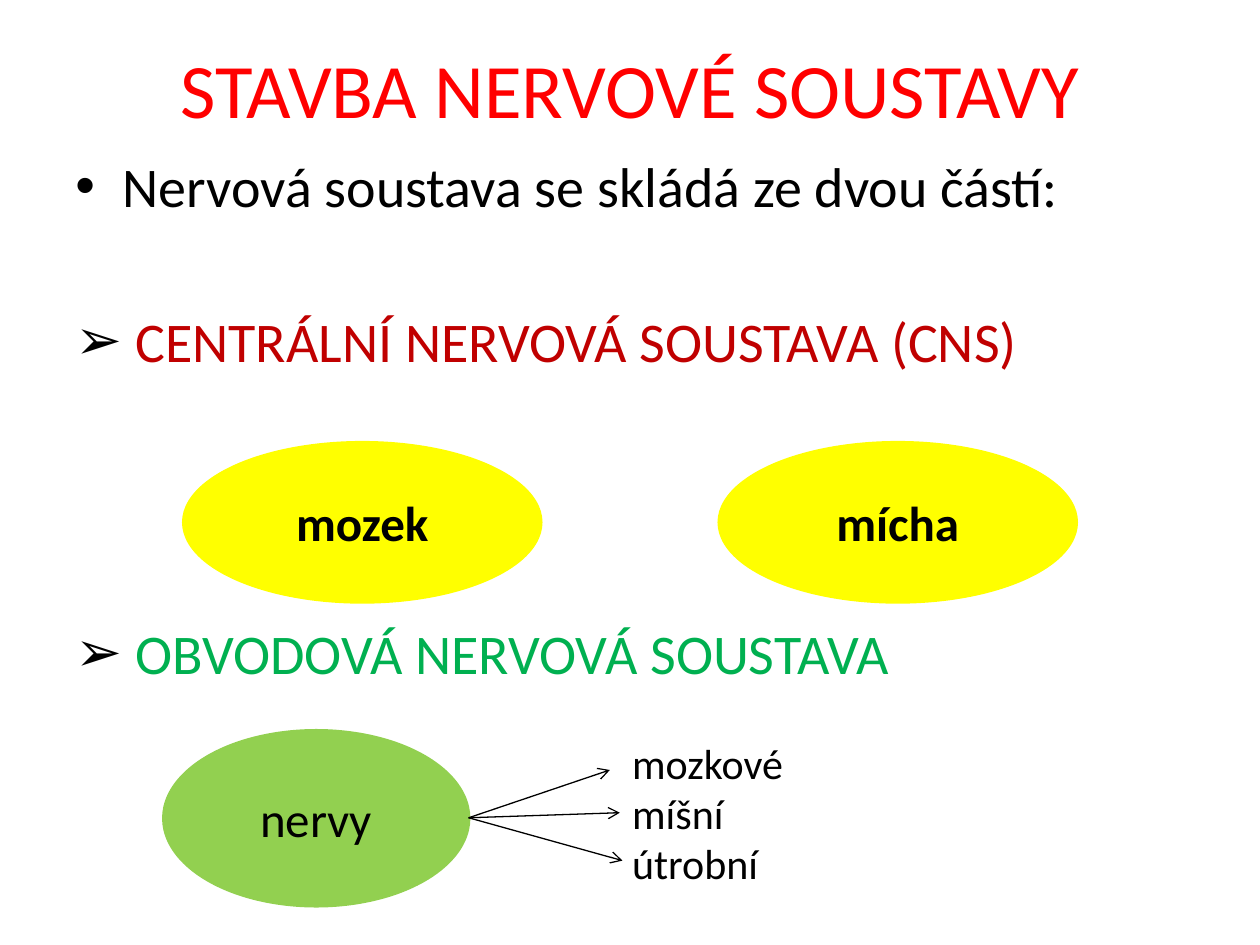
from dataclasses import dataclass

from lxml.etree import SubElement
from pptx import Presentation
from pptx.dml.color import RGBColor
from pptx.enum.shapes import MSO_CONNECTOR, MSO_SHAPE
from pptx.enum.text import MSO_ANCHOR, PP_ALIGN
from pptx.oxml.ns import qn
from pptx.util import Pt


@dataclass(frozen=True)
class Theme:
    font: str = "Calibri"
    black: str = "000000"
    red: str = "FF0000"
    dark: str = "C00000"
    green: str = "00B050"
    lime: str = "92D050"
    yellow: str = "FFFF00"
    title: int = 44
    body: int = 32
    oval: int = 28
    label: int = 24


theme = Theme()


def write(para, text, size, color=theme.black, bold=False):
    run = para.add_run()
    run.text = text
    font = run.font
    font.name, font.size, font.bold = theme.font, Pt(size), bold
    font.color.rgb = RGBColor.from_string(color)


def add_frame(left, top, width, height):
    """Add a wrapping text box and return its text frame."""
    box = slide.shapes.add_textbox(Pt(left), Pt(top), Pt(width), Pt(height))
    box.text_frame.word_wrap = True
    return box.text_frame


deck = Presentation()
deck.slide_width, deck.slide_height = Pt(720), Pt(540)
slide = deck.slides.add_slide(deck.slide_layouts[6])

# Title
frame = add_frame(36, 0, 648, 100)
frame.vertical_anchor = MSO_ANCHOR.MIDDLE
para = frame.paragraphs[0]
para.alignment = PP_ALIGN.CENTER
write(para, "STAVBA NERVOVÉ SOUSTAVY", theme.title, theme.red)

# Bulleted body: text, colour, bullet, indent, space before
points = [
    ("Nervová soustava se skládá ze dvou částí:", theme.black, "•", 27, 0),
    ("CENTRÁLNÍ NERVOVÁ SOUSTAVA (CNS)", theme.dark, "➢", 34.2, 50.6),
    ("OBVODOVÁ NERVOVÁ SOUSTAVA", theme.green, "➢", 34.2, 139.8),
]
frame = add_frame(36, 82.8, 648, 442)
for i, (text, color, mark, indent, gap) in enumerate(points):
    para = frame.add_paragraph() if i else frame.paragraphs[0]
    para.space_before = Pt(gap)
    props = para._p.get_or_add_pPr()
    props.set("marL", str(Pt(indent)))
    props.set("indent", str(-Pt(indent)))
    tint = SubElement(props, qn("a:buClr"))
    SubElement(tint, qn("a:srgbClr"), val=theme.black)
    SubElement(props, qn("a:buFont"), typeface="Arial")
    SubElement(props, qn("a:buChar"), char=mark)
    write(para, text, theme.body, color)

# Ovals
ovals = [
    ("mozek", 105, 253, 204, 91, theme.yellow, True),
    ("mícha", 411, 253, 204, 91, theme.yellow, True),
    ("nervy", 93.6, 417.6, 174.2, 100, theme.lime, False),
]
for text, left, top, width, height, color, bold in ovals:
    oval = slide.shapes.add_shape(
        MSO_SHAPE.OVAL, Pt(left), Pt(top), Pt(width), Pt(height))
    oval.shadow.inherit = False
    oval.fill.solid()
    oval.fill.fore_color.rgb = RGBColor.from_string(color)
    oval.line.color.rgb = RGBColor.from_string(color)
    oval.line.width = Pt(2)
    oval.text_frame.vertical_anchor = MSO_ANCHOR.MIDDLE
    para = oval.text_frame.paragraphs[0]
    para.alignment = PP_ALIGN.CENTER
    write(para, text, theme.oval, bold=bold)

# Kinds of nerves
frame = add_frame(354.2, 417.6, 124.6, 94.3)
for i, text in enumerate(["mozkové", "míšní", "útrobní"]):
    para = frame.add_paragraph() if i else frame.paragraphs[0]
    write(para, text, theme.label)

# Arrows from the nerve oval to each kind
for x, y in [(348.5, 440), (354.2, 464.4), (355.7, 491.8)]:
    arrow = slide.shapes.add_connector(
        MSO_CONNECTOR.STRAIGHT, Pt(267.8), Pt(467.3), Pt(x), Pt(y))
    arrow.line.color.rgb = RGBColor.from_string(theme.black)
    arrow.line.width = Pt(0.75)
    SubElement(arrow.line._get_or_add_ln(), qn("a:tailEnd"), type="arrow")
    SubElement(arrow._element.spPr, qn("a:effectLst"))

deck.save("out.pptx")
